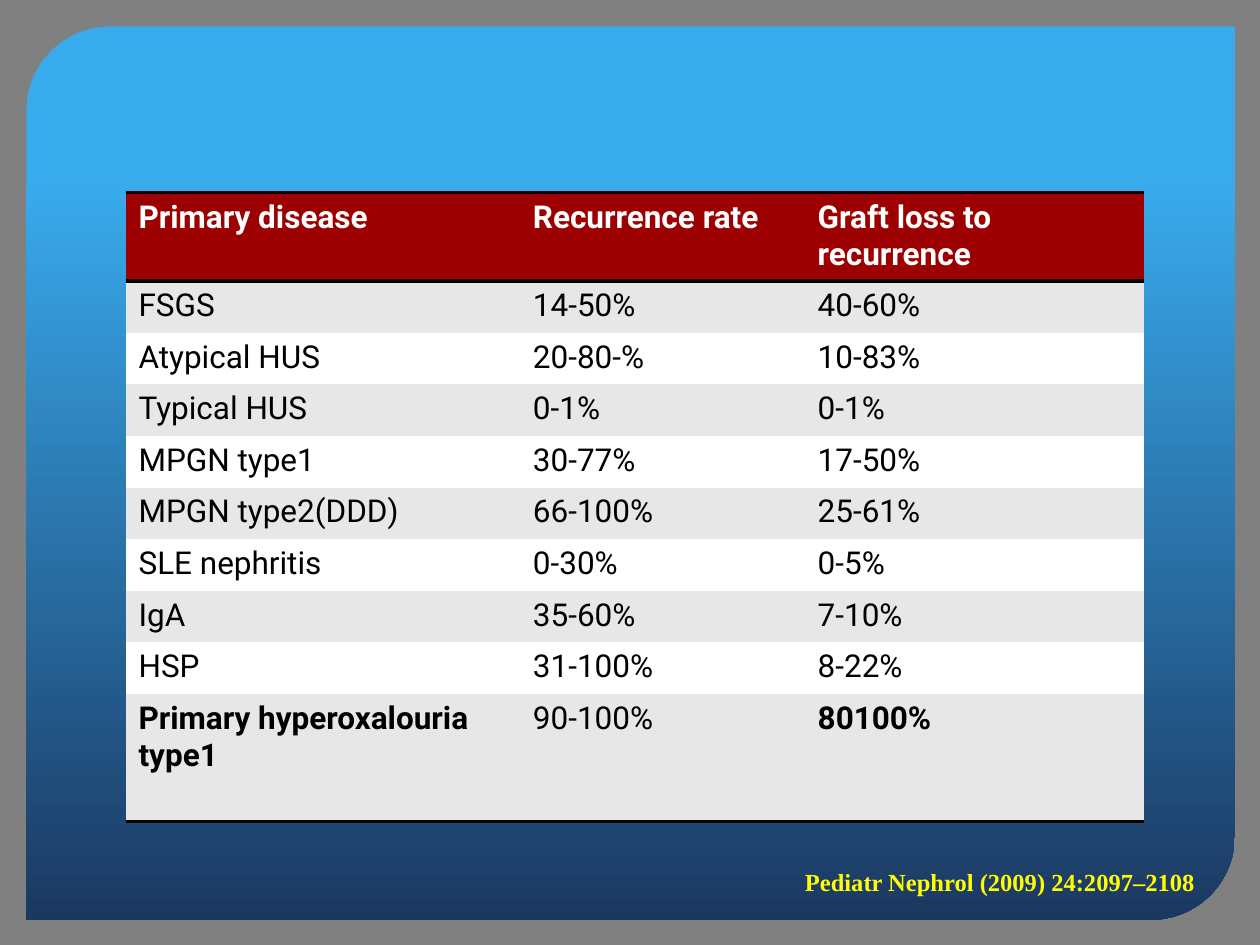
from pptx import Presentation
from pptx import util as u
from pptx.dml.color import RGBColor
from pptx.enum import shapes, text
from pptx.oxml import parse_xml
from pptx.oxml import ns

COLORS = {
    "frame": "808080", "sky": "38ABED", "navy": "1B3861", "header": "9C0001",
    "band": "E7E7E7", "white": "FFFFFF", "black": "000000", "citation": "FFFF00",
}
ROWS = [
    ("Primary disease", "Recurrence rate", "Graft loss to recurrence"),
    ("FSGS", "14-50%", "40-60%"),
    ("Atypical HUS", "20-80-%", "10-83%"),
    ("Typical HUS", "0-1%", "0-1%"),
    ("MPGN type1", "30-77%", "17-50%"),
    ("MPGN type2(DDD)", "66-100%", "25-61%"),
    ("SLE nephritis", "0-30%", "0-5%"),
    ("IgA", "35-60%", "7-10%"),
    ("HSP", "31-100%", "8-22%"),
    ("Primary hyperoxalouria type1", "90-100%", "80100%"),
]
COLUMN_WIDTHS = (3.13, 2.26, 2.69)
ROW_HEIGHTS = [0.7] + [0.41] * 8 + [1.01]
NO_STYLE = "{2D5ABB26-0587-4C30-8999-92F81FD0307C}"


def rgb(name):
    """Return the named colour."""
    return RGBColor.from_string(COLORS[name])


def inches(box):
    """Convert a box of numbers to lengths."""
    return [u.Inches(v) for v in box]


def write(tf, content, color, **fmt):
    """Put one formatted run in a text frame."""
    r = tf.paragraphs[0].add_run()
    r.text = content
    for name, value in fmt.items():
        setattr(r.font, name, value)
    r.font.color.rgb = rgb(color)


def add_border(cell, side):
    """Add a black rule to one side of a cell."""
    cell._tc.get_or_add_tcPr().append(parse_xml(
        f'<a:{side} {ns.nsdecls("a")} w="25400"><a:solidFill>'
        f'<a:srgbClr val="{COLORS["black"]}"/></a:solidFill></a:{side}>'))


def add_panel(s, box):
    """Draw the gradient panel with two rounded corners."""
    sp = s.shapes.add_shape(
        shapes.MSO_SHAPE.ROUND_2_DIAG_RECTANGLE, *inches(box))
    sp.shadow.inherit = False
    sp.adjustments[0] = 0.094
    sp.adjustments[1] = 0
    sp.line.fill.background()
    sp.fill.gradient()
    sp.fill.gradient_angle = 270
    stops = ((0.17, "sky"), (1, "navy"))
    for stop, (position, color) in zip(sp.fill.gradient_stops, stops):
        stop.position = position
        stop.color.rgb = rgb(color)


def add_recurrence_table(s, box):
    """Build the banded table of recurrence rates."""
    table = s.shapes.add_table(
        len(ROWS), len(COLUMN_WIDTHS), *inches(box)).table
    table._tbl.tblPr.find(ns.qn("a:tableStyleId")).text = NO_STYLE
    for column, width in zip(table.columns, COLUMN_WIDTHS):
        column.width = u.Inches(width)
    last = len(ROWS) - 1
    for i, values in enumerate(ROWS):
        table.rows[i].height = u.Inches(ROW_HEIGHTS[i])
        fill = "header" if i == 0 else "band" if i % 2 else "white"
        for j, value in enumerate(values):
            cell = table.cell(i, j)
            if i == 0:
                add_border(cell, "lnT")
            if i in (0, last):
                add_border(cell, "lnB")
            cell.fill.solid()
            cell.fill.fore_color.rgb = rgb(fill)
            write(cell.text_frame, value, "black" if i else "white",
                  name="Roboto", size=u.Pt(18),
                  bold=i == 0 or (i == last and j != 1))


def add_citation(s, box):
    """Place the journal reference."""
    tf = s.shapes.add_textbox(*inches(box)).text_frame
    tf.word_wrap = False
    tf.auto_size = text.MSO_AUTO_SIZE.SHAPE_TO_FIT_TEXT
    write(tf, "Pediatr Nephrol (2009) 24:2097–2108", "citation",
          name="Times New Roman", size=u.Pt(14), bold=True)


def main():
    """Build and save the slide."""
    prs = Presentation()
    prs.slide_width, prs.slide_height = inches((10, 7.5))
    s = prs.slides.add_slide(prs.slide_layouts[6])
    s.background.fill.solid()
    s.background.fill.fore_color.rgb = rgb("frame")
    add_panel(s, (0.21, 0.21, 9.59, 7.09))
    add_recurrence_table(s, (1, 1.53, 8.08, 4.97))
    add_citation(s, (6.29, 6.83, 3.32, 0.34))
    prs.save("out.pptx")


if __name__ == "__main__":
    main()
